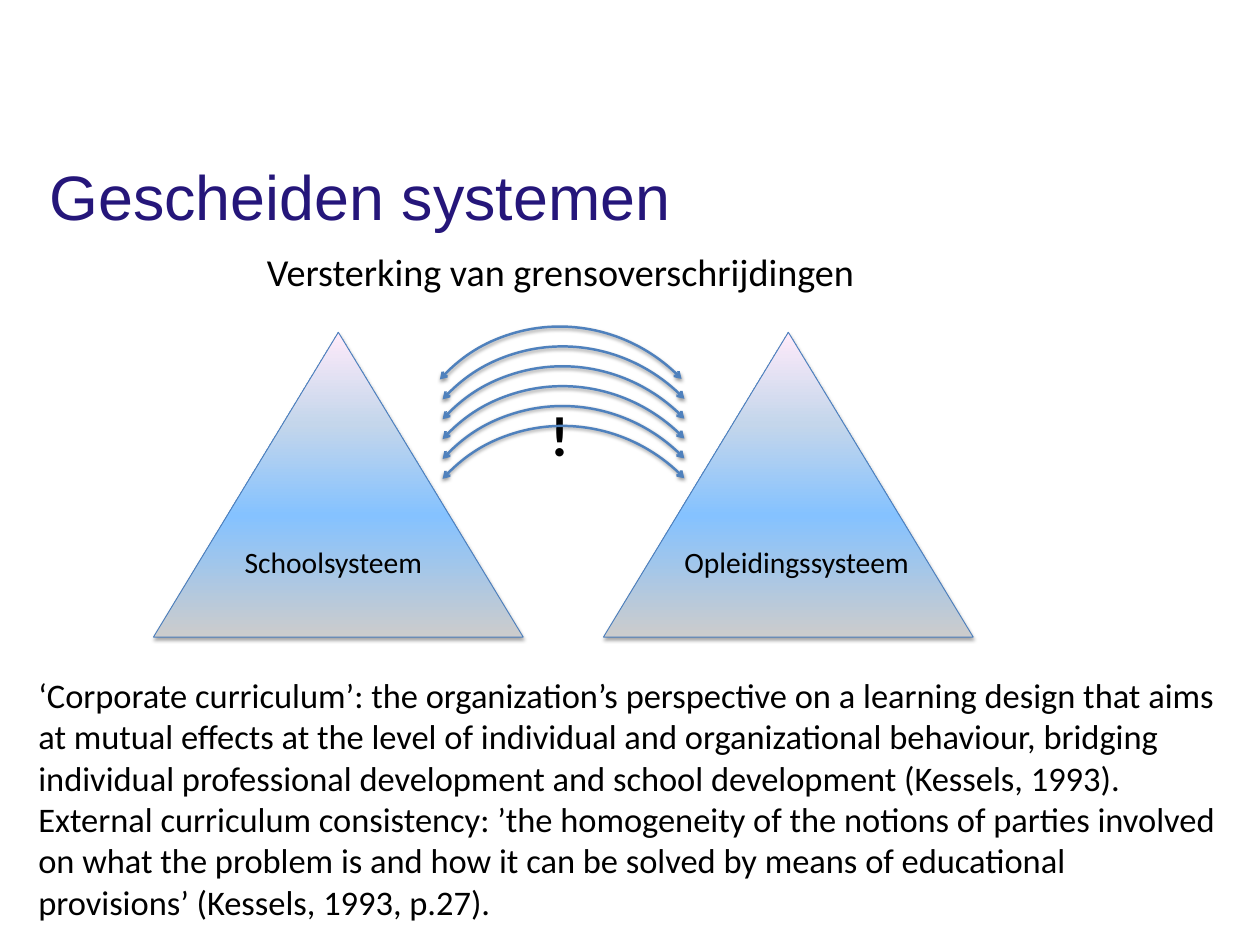
from dataclasses import dataclass

from lxml import etree
from pptx import Presentation
from pptx.dml.color import RGBColor
from pptx.enum.shapes import MSO_SHAPE
from pptx.enum.text import MSO_ANCHOR, MSO_AUTO_SIZE, PP_ALIGN
from pptx.oxml.ns import qn
from pptx.util import Cm, Pt

TRIANGLE = MSO_SHAPE.ISOSCELES_TRIANGLE
ARC = MSO_SHAPE.ARC
MIDDLE = MSO_ANCHOR.MIDDLE
GROW = MSO_AUTO_SIZE.SHAPE_TO_FIT_TEXT
NO_FIT = MSO_AUTO_SIZE.NONE
LEFT = PP_ALIGN.LEFT
CENTER = PP_ALIGN.CENTER


@dataclass(frozen=True)
class Theme:
    head: str = "Arial"
    body: str = "Calibri"
    navy: str = "25167A"
    black: str = "000000"
    edge: str = "4B7EBC"
    arrow: str = "4F81BD"
    fade: tuple = ((0, "CCCCCC"), (40, "85C2FF"), (70, "C4D6EB"), (100, "FFEBFA"))
    title: int = 51
    mark: int = 46
    sub: int = 31
    text: int = 28
    label: int = 24


THEME = Theme()
QUOTES = (
    "‘Corporate curriculum’: the organization’s perspective on a learning design "
    "that aims at mutual effects at the level of individual and organizational "
    "behaviour, bridging individual professional development and school "
    "development (Kessels, 1993).",
    "External curriculum consistency: ’the homogeneity of the notions of parties "
    "involved on what the problem is and how it can be solved by means of "
    "educational \nprovisions’ (Kessels, 1993, p.27).",
)


def apply(item, form):
    for name, value in form.items():
        setattr(item, name, value)


def place(box):
    return [Cm(value) for value in box]


def node(base, tag, **attrs):
    return etree.SubElement(base, qn(tag), attrs)


def style(para, size, color=THEME.black, face=THEME.body, bold=False):
    apply(para.font, {"size": Pt(size), "name": face, "bold": bold})
    para.font.color.rgb = RGBColor.from_string(color)


def add_title(slide, text, box):
    title = slide.shapes.title
    apply(title, dict(zip(("left", "top", "width", "height"), place(box))))
    frame = title.text_frame
    frame.text = text
    apply(frame, {"margin_left": Cm(0.15), "margin_right": Cm(0.3),
                  "margin_top": Cm(0.15), "margin_bottom": Cm(0.15),
                  "vertical_anchor": MIDDLE, "word_wrap": True,
                  "auto_size": NO_FIT})
    para = frame.paragraphs[0]
    para.alignment = LEFT
    style(para, THEME.title, THEME.navy, THEME.head)


def add_text(slide, lines, box, size, align=LEFT, wrap=True, bold=False):
    frame = slide.shapes.add_textbox(*place(box)).text_frame
    apply(frame, {"margin_left": Cm(0.36), "margin_right": Cm(0.36),
                  "margin_top": Cm(0.18), "margin_bottom": Cm(0.18),
                  "word_wrap": wrap, "auto_size": GROW})
    for index, line in enumerate(lines):
        para = frame.add_paragraph() if index else frame.paragraphs[0]
        para.text = line
        para.alignment = align
        style(para, size, bold=bold)


def add_shade(shape, alpha, gap):
    shape.shadow.inherit = False
    effects = shape._element.spPr.find(qn("a:effectLst"))
    shade = node(effects, "a:outerShdw", blurRad=str(Pt(3.1)), dist=str(Pt(gap)),
                 dir="5400000", rotWithShape="0")
    color = node(shade, "a:srgbClr", val=THEME.black)
    node(color, "a:alpha", val=str(alpha * 1000))


def add_line(shape, color, width):
    shape.line.color.rgb = RGBColor.from_string(color)
    shape.line.width = Pt(width)


def add_peak(slide, box):
    peak = slide.shapes.add_shape(TRIANGLE, *place(box))
    peak.fill.gradient()
    peak.fill.gradient_angle = 90
    stops = peak._element.spPr.find(".//" + qn("a:gsLst"))
    stops.clear()
    for pos, color in THEME.fade:
        stop = node(stops, "a:gs", pos=str(pos * 1000))
        node(stop, "a:srgbClr", val=color)
    add_line(peak, THEME.edge, 0.75)
    add_shade(peak, 35, 1.8)


def add_arc(slide, box):
    arc = slide.shapes.add_shape(ARC, *place(box))
    arc.adjustments[0] = 162
    arc.adjustments[1] = 2.68
    arc.rotation = 312
    arc.fill.background()
    add_line(arc, THEME.arrow, 2)
    line = arc._element.spPr.find(qn("a:ln"))
    for tag in ("a:headEnd", "a:tailEnd"):
        node(line, tag, type="arrow")
    add_shade(arc, 38, 1.6)


def main():
    deck = Presentation()
    deck.slide_width, deck.slide_height = Cm(36.12), Cm(27.1)
    slide = deck.slides.add_slide(deck.slide_layouts[5])
    add_title(slide, "Gescheiden systemen", (1.27, 3.35, 25.3, 4.52))
    for left in (4.4, 17.3):
        add_peak(slide, (left, 9.53, 10.6, 8.74))
    for label, left in (("Schoolsysteem", 5.72), ("Opleidingssysteem", 19)):
        add_text(slide, [label], (left, 15.42, 7.67, 1.4), THEME.label, CENTER)
    add_text(slide, ["!"], (15.42, 11.28, 1.27, 2.34), THEME.mark,
             wrap=False, bold=True)
    for step in range(6):
        left = 11.58 if step else 11.5
        add_arc(slide, (left, 9.3 + 0.57 * step, 9.32, 9.55))
    add_text(slide, ["Versterking van grensoverschrijdingen"],
             (7.29, 6.93, 18.31, 1.73), THEME.sub, wrap=False)
    add_text(slide, QUOTES, (0.74, 19.15, 35.38, 7.67), THEME.text)
    deck.save("out.pptx")


if __name__ == "__main__":
    main()
